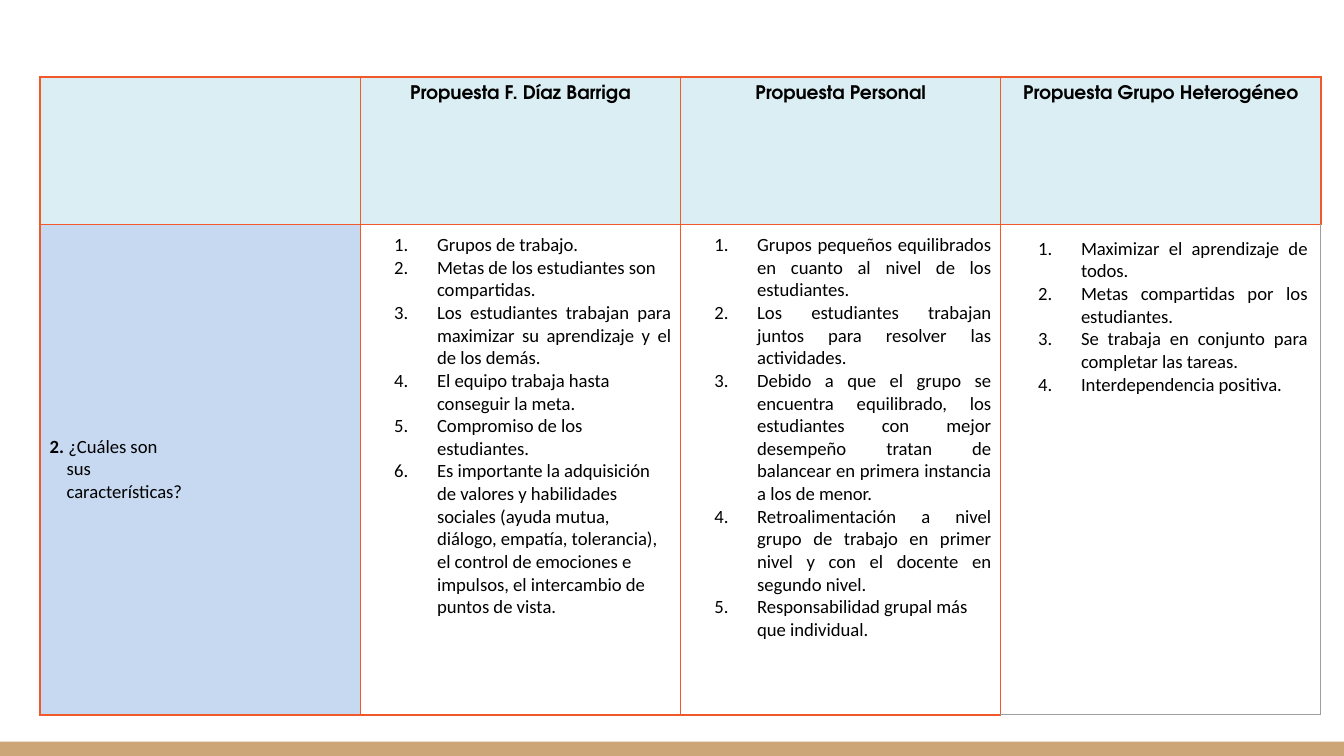
from lxml import etree
from pptx import Presentation
from pptx.dml.color import RGBColor
from pptx.enum.shapes import MSO_SHAPE
from pptx.enum.text import MSO_ANCHOR, PP_ALIGN
from pptx.oxml.ns import qn
from pptx.util import Cm, Pt

RECT = MSO_SHAPE.RECTANGLE
LEFT, CENTER, JUST = PP_ALIGN.LEFT, PP_ALIGN.CENTER, PP_ALIGN.JUSTIFY
MIDDLE = MSO_ANCHOR.MIDDLE

HEADS = ["", "Propuesta F. Díaz Barriga", "Propuesta Personal",
         "Propuesta Grupo Heterogéneo"]
ASK = [[("2.", True), (" ¿Cuáles son", False)],
       [("sus", False)],
       [("características?", False)]]
LISTS = [
    [("Grupos de trabajo.", LEFT),
     ("Metas de los estudiantes son compartidas.", LEFT),
     ("Los estudiantes trabajan para maximizar su aprendizaje y el de los "
      "demás.", JUST),
     ("El equipo trabaja hasta conseguir la meta.", LEFT),
     ("Compromiso de los estudiantes.", LEFT),
     ("Es importante la adquisición de valores y habilidades sociales (ayuda "
      "mutua, diálogo, empatía, tolerancia), el control de emociones e "
      "impulsos, el intercambio de puntos de vista.", LEFT)],
    [("Grupos pequeños equilibrados en cuanto al nivel de los estudiantes.",
      JUST),
     ("Los estudiantes trabajan juntos para resolver las actividades.", JUST),
     ("Debido a que el grupo se encuentra equilibrado, los estudiantes con "
      "mejor desempeño tratan de balancear en primera instancia a los de "
      "menor.", JUST),
     ("Retroalimentación a nivel grupo de trabajo en primer nivel y con el "
      "docente en segundo nivel.", JUST),
     ("Responsabilidad grupal más que individual.", LEFT)],
    [("Maximizar el aprendizaje de todos.", JUST),
     ("Metas compartidas por los estudiantes.", JUST),
     ("Se trabaja en conjunto para completar las tareas.", JUST),
     ("Interdependencia positiva.", JUST)],
]
ROWS = [2.79, 9.27]
COL = 6.05
PAD, WIDE = 0.18, 0.25
BLACK, ORANGE, GREY = "000000", "F1592A", "9E9E9E"
AQUA, BLUE, TAN = "DBEEF3", "C6D9F1", "CCA677"
BODY, HEAD = "Calibri", "TeX Gyre Adventor"


def color(hex):
    return RGBColor.from_string(hex)


def paint(obj, hex):
    obj.fill.solid()
    obj.fill.fore_color.rgb = color(hex)


def node(parent, tag, **attrs):
    return etree.SubElement(parent, qn(tag), attrs)


def border(cell, sides):
    """Draw the cell's edges; sides maps L, R, T, B to (colour, points)."""
    props = cell._tc.get_or_add_tcPr()
    for side in "LRTB":
        hex, width = sides[side]
        line = node(props, "a:ln" + side, w=str(Pt(width)))
        node(node(line, "a:solidFill"), "a:srgbClr", val=hex)


def write(par, text, font=BODY, bold=False):
    run = par.add_run()
    run.text = text
    run.font.name, run.font.size, run.font.bold = font, Pt(10), bold
    run.font.color.rgb = color(BLACK)


def indent(par, left, first=0):
    props = par._p.get_or_add_pPr()
    props.set("marL", str(Cm(left)))
    props.set("indent", str(Cm(first)))
    return props


def lines(cell, count):
    """Return count paragraphs of the cell."""
    frame = cell.text_frame
    for _ in range(count - 1):
        frame.add_paragraph()
    return frame.paragraphs


def number(cell, items):
    """Fill the cell with a numbered list."""
    for par, (text, align) in zip(lines(cell, len(items)), items):
        par.alignment = align
        props = indent(par, 1.27, -0.81)
        node(node(props, "a:buClr"), "a:srgbClr", val=BLACK)
        node(props, "a:buFont", typeface=BODY)
        node(props, "a:buAutoNum", type="arabicPeriod")
        write(par, text)


deck = Presentation()
deck.slide_width, deck.slide_height = Cm(25.4), Cm(14.29)
slide = deck.slides.add_slide(deck.slide_layouts[6])

band = slide.shapes.add_shape(RECT, 0, Cm(14.02), Cm(25.4), Cm(0.27))
band.shadow.inherit = False
paint(band, TAN)
band.line.fill.background()

table = slide.shapes.add_table(2, len(HEADS), Cm(0.76), Cm(1.45),
                               Cm(COL * len(HEADS)), Cm(sum(ROWS))).table
table.first_row = table.horz_banding = False
for row, high in zip(table.rows, ROWS):
    row.height = Cm(high)
for col in table.columns:
    col.width = Cm(COL)

last = table.cell(1, len(HEADS) - 1)
for cell in table.iter_cells():
    end = cell == last
    pad = Cm(WIDE if end else PAD)
    cell.margin_left = cell.margin_right = pad
    cell.margin_top = cell.margin_bottom = pad
    sides = dict.fromkeys("LRTB", (ORANGE, 1))
    if end:
        sides.update(R=(GREY, 0.75), B=(GREY, 0.75))
    border(cell, sides)
    cell.fill.background()

for i, text in enumerate(HEADS):
    cell = table.cell(0, i)
    paint(cell, AQUA)
    if text:
        par = cell.text_frame.paragraphs[0]
        par.alignment = CENTER
        write(par, text, HEAD, True)

ask = table.cell(1, 0)
paint(ask, BLUE)
ask.vertical_anchor = MIDDLE
for i, (par, runs) in enumerate(zip(lines(ask, len(ASK)), ASK)):
    indent(par, 0.32 if i else 0)
    for text, bold in runs:
        write(par, text, bold=bold)

for i, items in enumerate(LISTS, 1):
    number(table.cell(1, i), items)

deck.save("out.pptx")
